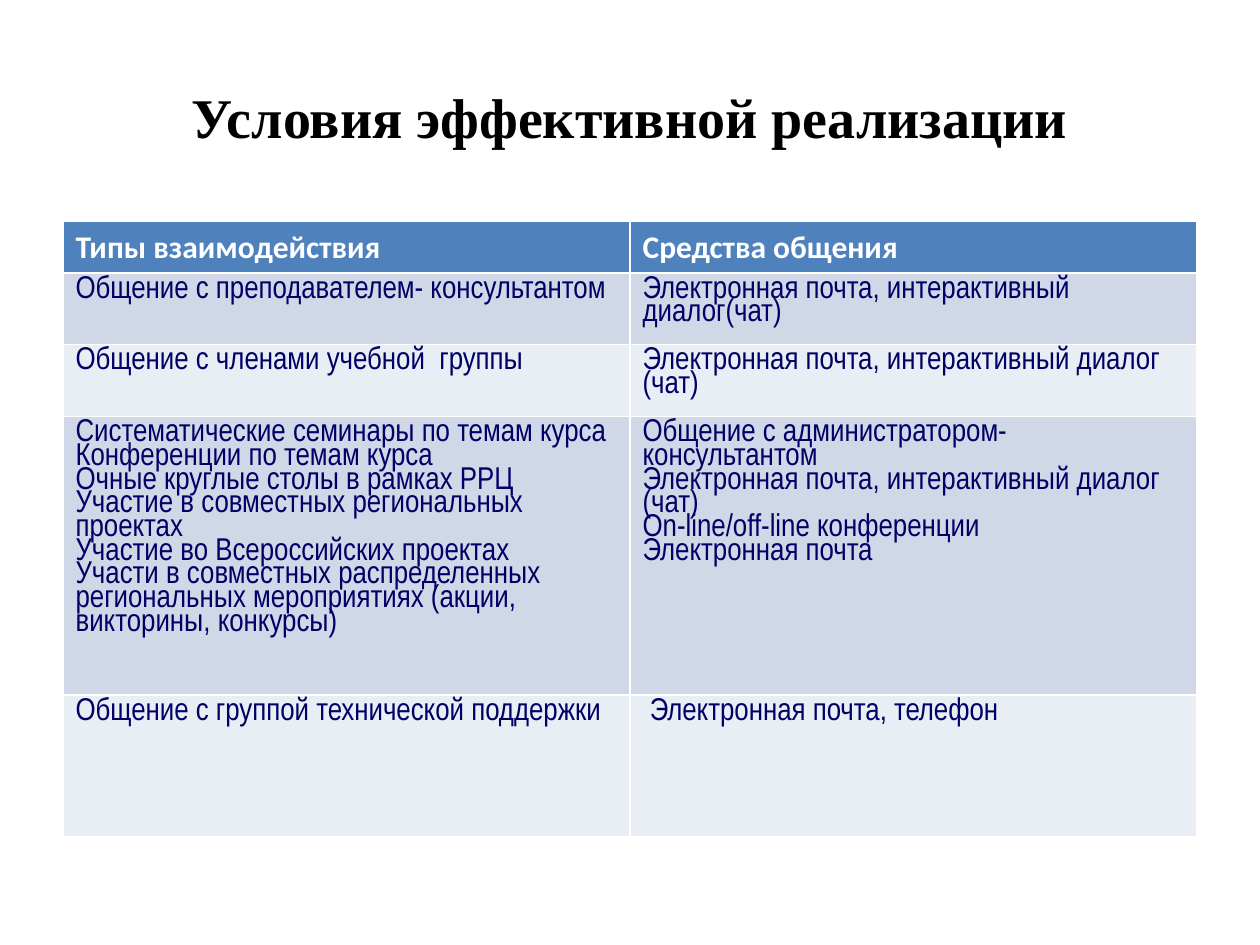
from pptx import Presentation
from pptx.dml.color import RGBColor
from pptx.enum.text import MSO_ANCHOR, PP_ALIGN
from pptx.util import Inches, Pt

BLACK = RGBColor(0x00, 0x00, 0x00)
WHITE = RGBColor(0xFF, 0xFF, 0xFF)
NAVY = RGBColor(0x00, 0x00, 0x66)
HEADER_BLUE = RGBColor(0x4F, 0x81, 0xBD)
BAND_FILLS = (RGBColor(0xD0, 0xD8, 0xE8), RGBColor(0xE9, 0xED, 0xF4))

TITLE = "Условия эффективной реализации"
HEADER = ("Типы взаимодействия", "Средства общения")
BODY = [
    ("Общение с преподавателем- консультантом",
     "Электронная почта, интерактивный диалог(чат)"),
    ("Общение с членами учебной  группы",
     "Электронная почта, интерактивный диалог (чат)"),
    ("Систематические семинары по темам курса\n"
     "Конференции по темам курса\n"
     "Очные круглые столы в рамках РРЦ\n"
     "Участие в совместных региональных проектах\n"
     "Участие во Всероссийских проектах\n"
     "Участи в совместных распределенных региональных мероприятиях "
     "(акции, викторины, конкурсы)",
     "Общение с администратором- консультантом\n"
     "Электронная почта, интерактивный диалог (чат)\n"
     "On-line/off-line конференции\n"
     "Электронная почта"),
    ("Общение с группой технической поддержки",
     " Электронная почта, телефон"),
]
ROW_HEIGHTS = (0.39, 0.57, 0.57, 2.21, 1.13)


def format_text(text_frame, font_name, size, color, bold):
    for paragraph in text_frame.paragraphs:
        for run in paragraph.runs:
            run.font.name = font_name
            run.font.size = Pt(size)
            run.font.color.rgb = color
            run.font.bold = bold


def set_title(slide):
    title = slide.shapes.title
    title.left, title.top = Inches(0.5), Inches(0.3)
    title.width, title.height = Inches(9), Inches(1.25)
    text_frame = title.text_frame
    text_frame.text = TITLE
    text_frame.vertical_anchor = MSO_ANCHOR.MIDDLE
    text_frame.paragraphs[0].alignment = PP_ALIGN.CENTER
    format_text(text_frame, "Times New Roman", 32, BLACK, True)


def fill_cell(cell, text, fill_color):
    cell.text_frame.text = text
    cell.fill.solid()
    cell.fill.fore_color.rgb = fill_color


def add_communication_table(slide):
    """Add the table; its default style supplies the white cell borders."""
    table = slide.shapes.add_table(
        len(ROW_HEIGHTS), len(HEADER), Inches(0.5), Inches(1.76),
        Inches(9), Inches(sum(ROW_HEIGHTS))).table
    for row, height in zip(table.rows, ROW_HEIGHTS):
        row.height = Inches(height)

    for column, text in enumerate(HEADER):
        cell = table.cell(0, column)
        fill_cell(cell, text, HEADER_BLUE)
        format_text(cell.text_frame, "Calibri", 18, WHITE, True)

    for row_index, texts in enumerate(BODY):
        for column, text in enumerate(texts):
            cell = table.cell(row_index + 1, column)
            fill_cell(cell, text, BAND_FILLS[row_index % 2])
            format_text(cell.text_frame, "Arial Narrow", 18, NAVY, False)
            for paragraph in cell.text_frame.paragraphs:
                paragraph.line_spacing = 0.8


def main():
    presentation = Presentation()
    presentation.slide_width = Inches(10)
    presentation.slide_height = Inches(7.5)
    slide = presentation.slides.add_slide(presentation.slide_layouts[5])
    set_title(slide)
    add_communication_table(slide)
    presentation.save("out.pptx")


if __name__ == "__main__":
    main()
